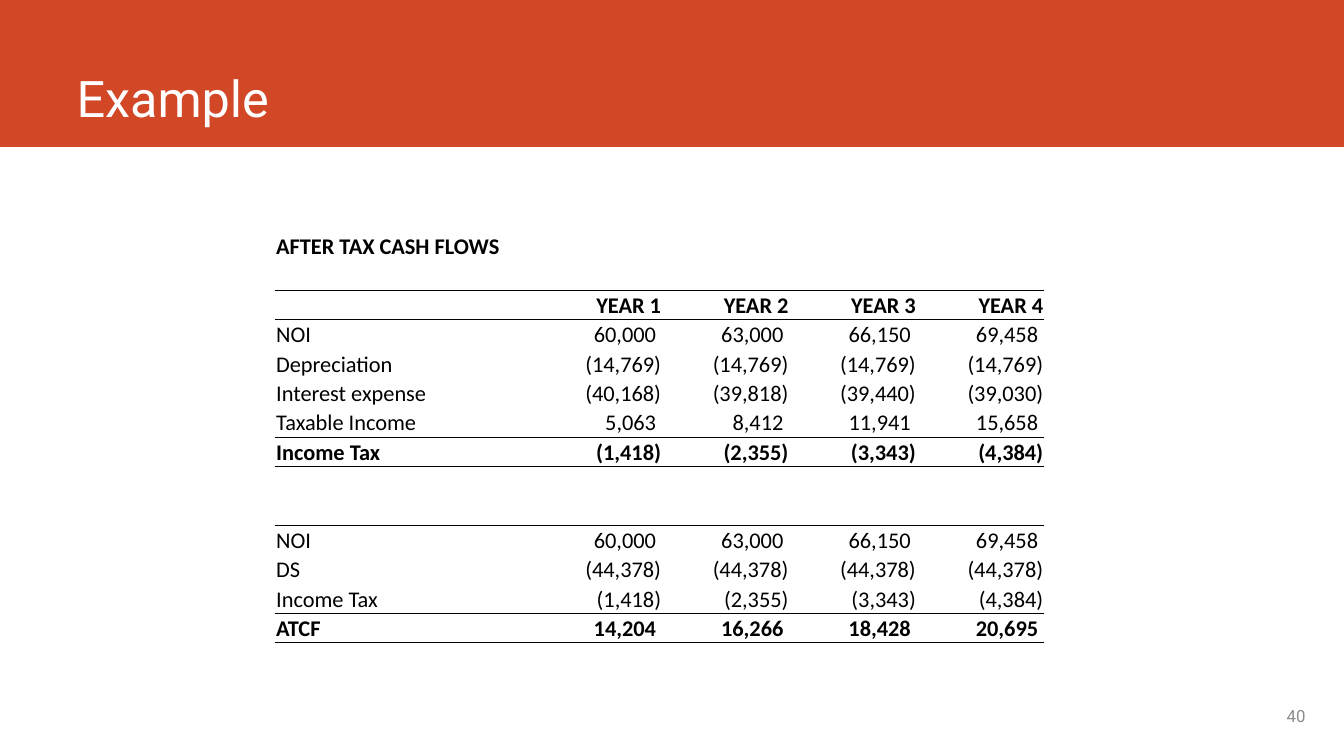
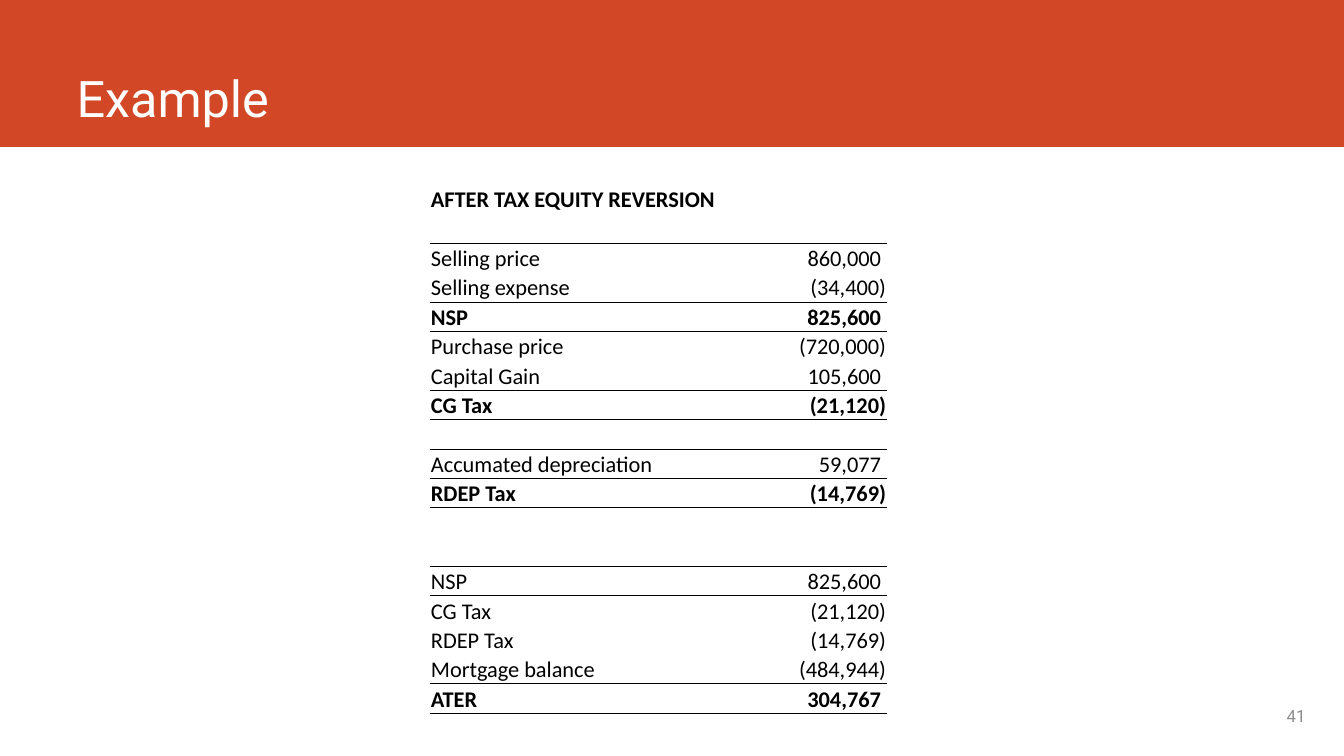
from dataclasses import dataclass

from lxml import etree
from pptx import Presentation
from pptx.dml.color import RGBColor
from pptx.enum.shapes import MSO_SHAPE
from pptx.enum.text import MSO_ANCHOR, PP_ALIGN
from pptx.oxml.ns import qn
from pptx.slide import Slide
from pptx.table import _Cell
from pptx.util import Cm, Pt

RECTANGLE = MSO_SHAPE.RECTANGLE
LEFT, RIGHT = PP_ALIGN.LEFT, PP_ALIGN.RIGHT
MIDDLE, BOTTOM = MSO_ANCHOR.MIDDLE, MSO_ANCHOR.BOTTOM

# Shared look
ORANGE = RGBColor(0xD2, 0x47, 0x26)
WHITE = RGBColor(0xFF, 0xFF, 0xFF)
BLACK = RGBColor(0x00, 0x00, 0x00)
GREY = RGBColor(0x8C, 0x8C, 0x8C)
SLIDE_FONT, TABLE_FONT = "Roboto", "Calibri"
TABLE_SIZE = Pt(16)
RULE_WIDTH = Pt(0.5)
ROW_HEIGHT = Cm(0.74)
CELL_MARGIN = Cm(0.03)
PLAIN_TABLE_STYLE = "{2D5ABB26-0587-4C30-8999-92F81FD0307C}"


@dataclass(frozen=True)
class TextStyle:
    font: str
    size: Pt
    color: RGBColor
    align: PP_ALIGN
    anchor: MSO_ANCHOR


@dataclass(frozen=True)
class Row:
    label: str = ""
    values: tuple[int | str, ...] = ()
    bold: bool = False
    rule_above: bool = False


@dataclass(frozen=True)
class Schedule:
    page_number: int
    left: Cm
    top: Cm
    column_widths: tuple[Cm, ...]
    rows: tuple[Row, ...]


TITLE_STYLE = TextStyle(SLIDE_FONT, Pt(36), WHITE, LEFT, BOTTOM)
NUMBER_STYLE = TextStyle(SLIDE_FONT, Pt(12), GREY, RIGHT, MIDDLE)

# Figures
NOI = (60000, 63000, 66150, 69458)
INCOME_TAX = (-1418, -2355, -3343, -4384)
BLANK = Row()
RULED_BLANK = Row(rule_above=True)

SCHEDULES = (
    Schedule(40, Cm(6.93), Cm(5.83), (Cm(6.55),) + (Cm(3.21),) * 4, (
        Row("AFTER TAX CASH FLOWS", bold=True),
        BLANK,
        Row("", ("YEAR 1", "YEAR 2", "YEAR 3", "YEAR 4"), True, True),
        Row("NOI", NOI, rule_above=True),
        Row("Depreciation", (-14769,) * 4),
        Row("Interest expense", (-40168, -39818, -39440, -39030)),
        Row("Taxable Income", (5063, 8412, 11941, 15658)),
        Row("Income Tax", INCOME_TAX, True, True),
        RULED_BLANK,
        BLANK,
        Row("NOI", NOI, rule_above=True),
        Row("DS", (-44378,) * 4),
        Row("Income Tax", INCOME_TAX),
        Row("ATCF", (14204, 16266, 18428, 20695), True, True),
    )),
    Schedule(41, Cm(10.83), Cm(4.65), (Cm(7.73), Cm(3.8)), (
        Row("AFTER TAX EQUITY REVERSION", bold=True),
        BLANK,
        Row("Selling price", (860000,), rule_above=True),
        Row("Selling expense", (-34400,)),
        Row("NSP", (825600,), True, True),
        Row("Purchase price", (-720000,), rule_above=True),
        Row("Capital Gain", (105600,)),
        Row("CG Tax", (-21120,), True, True),
        RULED_BLANK,
        Row("Accumated depreciation", (59077,), rule_above=True),
        Row("RDEP Tax", (-14769,), True, True),
        RULED_BLANK,
        BLANK,
        Row("NSP", (825600,), rule_above=True),
        Row("CG Tax", (-21120,), rule_above=True),
        Row("RDEP Tax", (-14769,)),
        Row("Mortgage balance", (-484944,)),
        Row("ATER", (304767,), True, True),
    )),
)


def accounting(value: int | str) -> str:
    """Negatives in brackets; positives keep a space where the bracket would be."""
    if isinstance(value, str):
        return value
    return f"({-value:,})" if value < 0 else f"{value:,} "


def add_text(page: Slide, text: str, place: tuple[Cm, ...], style: TextStyle) -> None:
    frame = page.shapes.add_textbox(*place).text_frame
    frame.word_wrap = True
    frame.vertical_anchor = style.anchor
    para = frame.paragraphs[0]
    para.alignment = style.align
    span = para.add_run()
    span.text = text
    span.font.name = style.font
    span.font.size = style.size
    span.font.color.rgb = style.color


def add_frame(page: Slide, page_number: int, width: int) -> None:
    # Band, title and page number
    band = page.shapes.add_shape(RECTANGLE, 0, 0, width, Cm(3.7))
    band.shadow.inherit = False
    band.fill.solid()
    band.fill.fore_color.rgb = ORANGE
    band.line.fill.background()
    add_text(page, "Example", (Cm(1.68), Cm(0), Cm(29.87), Cm(3.35)), TITLE_STYLE)
    add_text(page, str(page_number), (Cm(24.05), Cm(17.53), Cm(9.1), Cm(1.01)),
             NUMBER_STYLE)


def draw_rule(cell: _Cell, side: str, visible: bool) -> None:
    line = etree.SubElement(cell._tc.get_or_add_tcPr(), qn(f"a:{side}"))
    line.set("w", str(RULE_WIDTH))
    if visible:
        fill = etree.SubElement(line, qn("a:solidFill"))
        etree.SubElement(fill, qn("a:srgbClr")).set("val", str(BLACK))
    else:
        etree.SubElement(line, qn("a:noFill"))


def fill_cell(cell: _Cell, text: str, bold: bool, align: PP_ALIGN,
              anchor: MSO_ANCHOR) -> None:
    cell.margin_left = cell.margin_right = cell.margin_top = CELL_MARGIN
    cell.margin_bottom = 0
    cell.vertical_anchor = anchor
    para = cell.text_frame.paragraphs[0]
    para.alignment = align
    if not text:
        # Empty cells keep the table's text size, so rows stay equal
        end = etree.SubElement(para._p, qn("a:endParaRPr"))
        end.set("sz", str(int(TABLE_SIZE.pt * 100)))
        return
    span = para.add_run()
    span.text = text
    span.font.name = TABLE_FONT
    span.font.size = TABLE_SIZE
    span.font.bold = bold
    span.font.color.rgb = BLACK


def add_schedule(page: Slide, schedule: Schedule) -> None:
    rows, widths = schedule.rows, schedule.column_widths
    table = page.shapes.add_table(
        len(rows), len(widths), schedule.left, schedule.top,
        sum(widths), ROW_HEIGHT * len(rows)).table
    table.first_row = table.horz_banding = False
    table._tbl.tblPr.find(qn("a:tableStyleId")).text = PLAIN_TABLE_STYLE
    for column, width in zip(table.columns, widths):
        column.width = width

    # A row's lower rule is the next row's upper one; the last row is closed
    rules = [row.rule_above for row in rows] + [True]
    for index, row in enumerate(rows):
        table.rows[index].height = ROW_HEIGHT
        texts = [row.label, *map(accounting, row.values)]
        texts += [""] * (len(widths) - len(texts))
        anchor = BOTTOM if row.label else MIDDLE
        for position, text in enumerate(texts):
            cell = table.cell(index, position)
            fill_cell(cell, text, row.bold, RIGHT if position else LEFT, anchor)
            draw_rule(cell, "lnT", rules[index])
            draw_rule(cell, "lnB", rules[index + 1])
            cell.fill.background()


def main() -> None:
    deck = Presentation()
    deck.slide_width, deck.slide_height = Cm(33.87), Cm(19.05)
    blank_layout = deck.slide_layouts[6]
    for schedule in SCHEDULES:
        page = deck.slides.add_slide(blank_layout)
        add_frame(page, schedule.page_number, deck.slide_width)
        add_schedule(page, schedule)
    deck.save("out.pptx")


if __name__ == "__main__":
    main()
